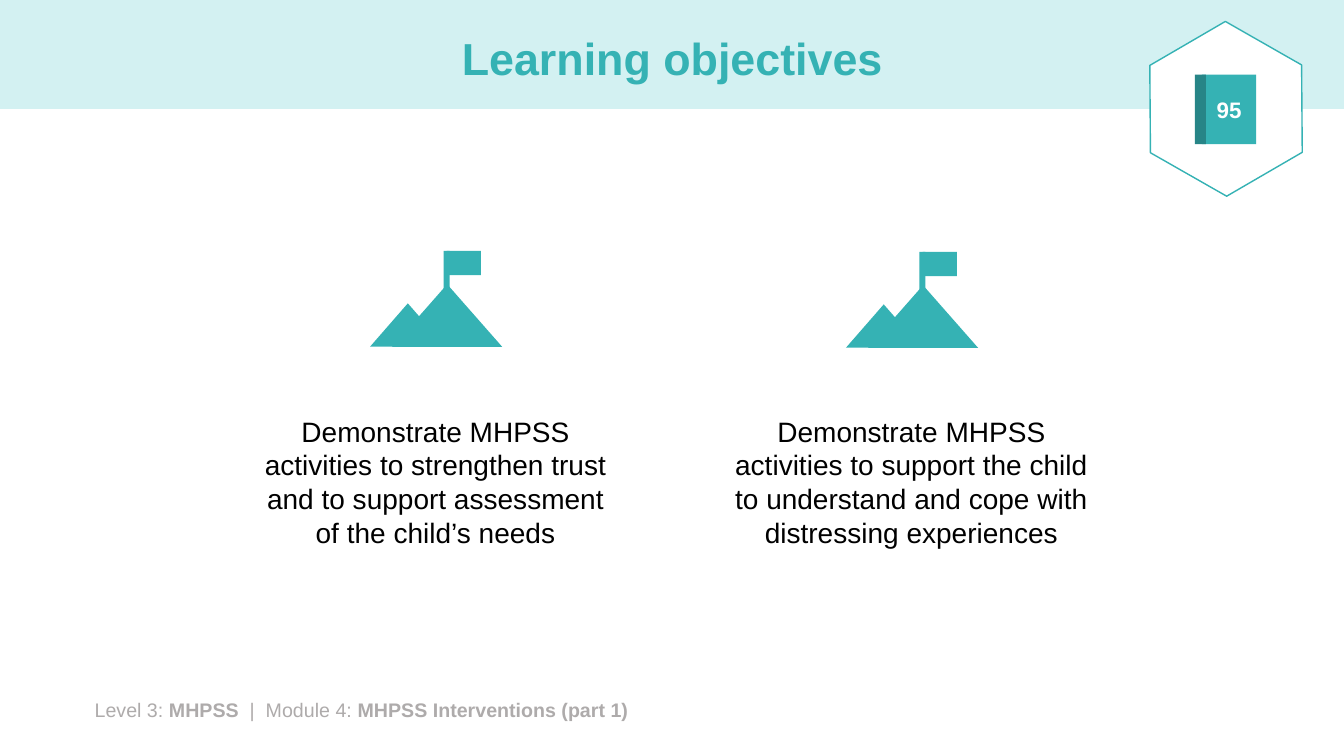
from dataclasses import dataclass

from pptx import Presentation
from pptx.dml.color import RGBColor
from pptx.enum.shapes import MSO_SHAPE
from pptx.enum.text import MSO_ANCHOR, MSO_AUTO_SIZE, PP_ALIGN
from pptx.util import Emu, Pt

RECT = MSO_SHAPE.RECTANGLE
PEAK = MSO_SHAPE.ISOSCELES_TRIANGLE
HEX = MSO_SHAPE.HEXAGON
LEFT, MID = PP_ALIGN.LEFT, PP_ALIGN.CENTER
TOP, CENTRE = MSO_ANCHOR.TOP, MSO_ANCHOR.MIDDLE
FIXED = MSO_AUTO_SIZE.NONE

SCALE = 9144  # EMU in one px, 100 px to the inch
WIDE, HIGH = 1333, 750
FONT = "Arial"
TEAL, DARK, PALE = "35B2B4", "278587", "D3F1F2"
WHITE, BLACK, GREY = "FFFFFF", "000000", "AEABAB"


@dataclass(frozen=True)
class Box:
    x: int
    y: int
    w: int
    h: int


@dataclass(frozen=True)
class Part:
    kind: MSO_SHAPE
    box: Box


@dataclass(frozen=True)
class Goal:
    text: str
    box: Box
    icon_x: int
    icon_y: int


# Flag on a mountain, measured from the icon's corner
ICON = [
    Part(RECT, Box(73, 0, 6, 40)),
    Part(RECT, Box(76, 0, 34, 24)),
    Part(PEAK, Box(22, 33, 109, 62)),
    Part(PEAK, Box(0, 52, 75, 43)),
]

GOALS = [
    Goal("Demonstrate MHPSS activities to strengthen trust and to support "
         "assessment of the child’s needs", Box(250, 406, 364, 145), 367, 249),
    Goal("Demonstrate MHPSS activities to support the child to understand "
         "and cope with distressing experiences", Box(711, 406, 386, 145), 839, 250),
]

FOOTER = [
    ("Level 3: ", False),
    ("MHPSS", True),
    ("  |  Module 4: ", False),
    ("MHPSS Interventions (part 1)", True),
]


def px(size: int) -> Emu:
    return Emu(size * SCALE)


def frame(box: Box) -> tuple[Emu, Emu, Emu, Emu]:
    return px(box.x), px(box.y), px(box.w), px(box.h)


def paint(colour, value: str) -> None:
    colour.rgb = RGBColor.from_string(value)


def draw(shapes, kind: MSO_SHAPE, box: Box, fill: str, line: str = ""):
    shape = shapes.add_shape(kind, *frame(box))
    shape.shadow.inherit = False
    shape.fill.solid()
    paint(shape.fill.fore_color, fill)
    if line:
        paint(shape.line.color, line)
        shape.line.width = Pt(1)
    else:
        shape.line.fill.background()
    return shape


def write(shape, runs: list[tuple[str, bool]], *, size: int, colour: str,
          align: PP_ALIGN = MID, anchor: MSO_ANCHOR = TOP, space: float = 1.0) -> None:
    text = shape.text_frame
    text.word_wrap = True
    text.auto_size = FIXED
    text.vertical_anchor = anchor
    para = text.paragraphs[0]
    para.alignment = align
    para.line_spacing = space
    for words, bold in runs:
        run = para.add_run()
        run.text = words
        run.font.name = FONT
        run.font.size = Pt(size)
        run.font.bold = bold
        paint(run.font.color, colour)


def main() -> None:
    deck = Presentation()
    deck.slide_width, deck.slide_height = px(WIDE), px(HIGH)
    slide = deck.slides.add_slide(deck.slide_layouts[5])
    shapes = slide.shapes

    # Title, with its band behind it
    title = shapes.title
    title.left, title.top, title.width, title.height = frame(Box(92, 13, 1150, 95))
    write(title, [("Learning objectives", True)], size=32, colour=TEAL,
          anchor=CENTRE, space=0.9)
    band = draw(shapes, RECT, Box(0, 0, WIDE, 108), PALE)
    title.element.addprevious(band.element)

    # Footer
    foot = shapes.add_textbox(*frame(Box(84, 687, 1135, 34)))
    write(foot, FOOTER, size=14, colour=GREY, align=LEFT)

    # Objectives, each under its icon
    for goal in GOALS:
        note = shapes.add_textbox(*frame(goal.box))
        write(note, [(goal.text, False)], size=20, colour=BLACK)
        icon = shapes.add_group_shape()
        for part in ICON:
            box = part.box
            spot = Box(goal.icon_x + box.x, goal.icon_y + box.y, box.w, box.h)
            draw(icon.shapes, part.kind, spot, TEAL)

    # Page badge: a book in a hexagon
    badge = draw(shapes, HEX, Box(1129, 33, 174, 150), WHITE, TEAL)
    badge.adjustments[0] = 0.29
    badge.rotation = 29.7
    book = shapes.add_group_shape()
    cover = draw(book.shapes, RECT, Box(1192, 74, 54, 69), TEAL)
    write(cover, [("95", True)], size=16, colour=WHITE, anchor=CENTRE)
    draw(book.shapes, RECT, Box(1185, 74, 11, 69), DARK)

    deck.save("out.pptx")


if __name__ == "__main__":
    main()
